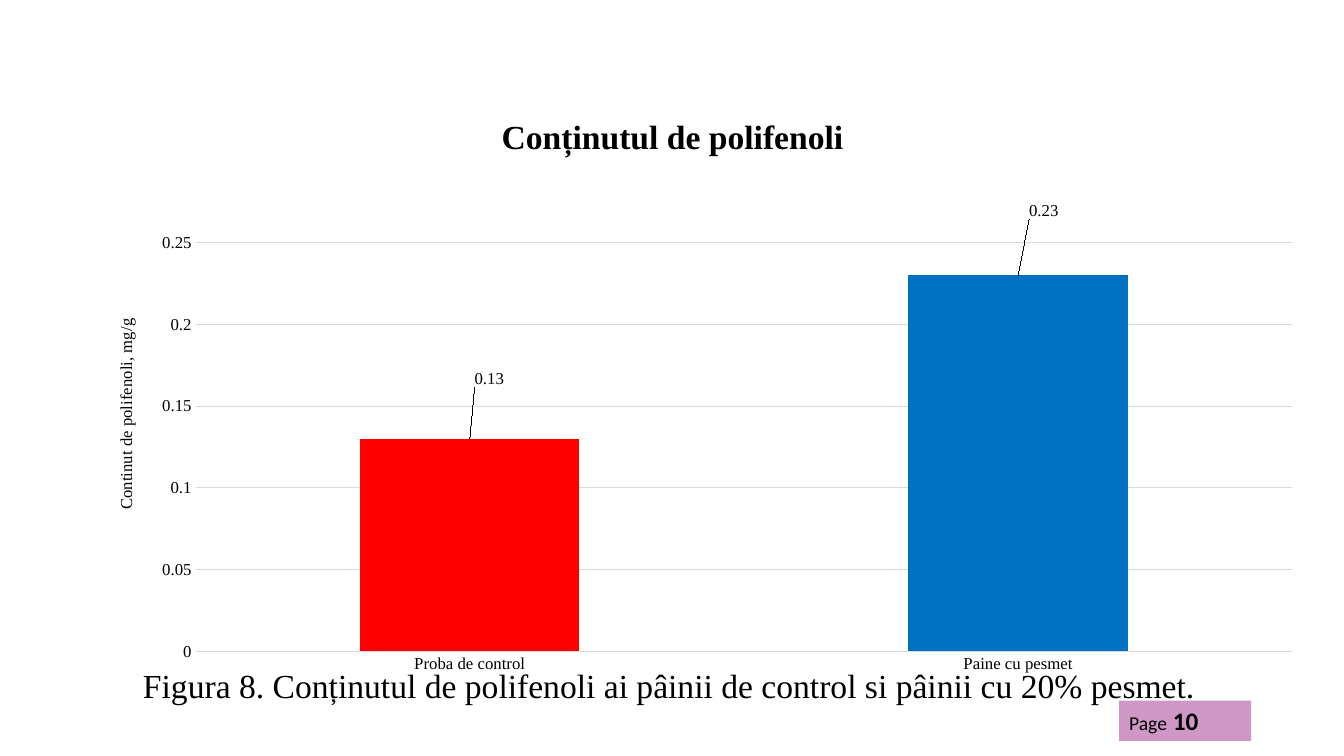
from lxml import etree
from pptx import Presentation
from pptx.chart.data import CategoryChartData
from pptx.dml.color import RGBColor
from pptx.enum.chart import XL_CHART_TYPE, XL_LABEL_POSITION, XL_TICK_MARK
from pptx.enum.shapes import MSO_SHAPE
from pptx.enum.text import MSO_ANCHOR, PP_ALIGN
from pptx.oxml.ns import qn
from pptx.util import Inches, Pt

COLUMNS = XL_CHART_TYPE.COLUMN_CLUSTERED
OUTSIDE = XL_LABEL_POSITION.OUTSIDE_END
NO_TICK = XL_TICK_MARK.NONE
RECTANGLE = MSO_SHAPE.RECTANGLE
MIDDLE = MSO_ANCHOR.MIDDLE
CENTER, LEFT = PP_ALIGN.CENTER, PP_ALIGN.LEFT
SERIF = "Times New Roman"


def style_font(font, size, color="000000", name=SERIF, bold=False):
    font.size = Pt(size)
    font.name = name
    font.bold = bold
    font.color.rgb = RGBColor.from_string(color)


def set_layout(parent, index, **values):
    """Place a chart part by fractions of the chart's size."""
    for old in parent.findall(qn("c:layout")):
        parent.remove(old)
    layout = etree.Element(qn("c:layout"))
    manual = etree.SubElement(layout, qn("c:manualLayout"))
    for tag, value in values.items():
        etree.SubElement(manual, qn(f"c:{tag}")).set("val", str(value))
    parent.insert(index, layout)


deck = Presentation()
deck.slide_width = Inches(13.33)
deck.slide_height = Inches(7.5)
page = deck.slides.add_slide(deck.slide_layouts[6])

# Title
title_box = page.shapes.add_textbox(Inches(0.92), Inches(0.91), Inches(11.5), Inches(0.94))
title_box.text_frame.word_wrap = True
title_box.text_frame.vertical_anchor = MIDDLE
para = title_box.text_frame.paragraphs[0]
para.text = "Conținutul de polifenoli"
para.alignment = CENTER
para.line_spacing = 0.9
style_font(para.font, 24, bold=True)

# Page number
page_tag = page.shapes.add_shape(RECTANGLE, Inches(11.1), Inches(6.95), Inches(1.31), Inches(0.4))
page_tag.shadow.inherit = False
page_tag.line.fill.background()
page_tag.fill.solid()
page_tag.fill.fore_color.rgb = RGBColor.from_string("9F318D")
tag_color = page_tag.fill._xPr.find(f".//{qn('a:srgbClr')}")
etree.SubElement(tag_color, qn("a:alpha")).set("val", "50000")
page_tag.text_frame.vertical_anchor = MIDDLE
para = page_tag.text_frame.paragraphs[0]
para.alignment = LEFT
for text, size, bold in (("Page", 14, False), (" 10", 18, True)):
    span = para.add_run()
    span.text = text
    style_font(span.font, size, name="Calibri", bold=bold)

# Polyphenol chart
data = CategoryChartData()
data.categories = ["Proba de control", "Paine cu pesmet"]
data.add_series("Series 1", (0.13, 0.23))
chart = page.shapes.add_chart(
    COLUMNS, Inches(0.92), Inches(2), Inches(12.14), Inches(4.76), data).chart
style_font(chart.font, 10, name="Calibri")
chart.has_title = False
chart.has_legend = False
set_layout(chart._chartSpace.chart.plotArea, 0, layoutTarget="inner", xMode="edge",
           yMode="edge", x=0.084, y=0.077, w=0.896, h=0.86)

# Axes
for axis in (chart.category_axis, chart.value_axis):
    axis.major_tick_mark = NO_TICK
    axis.minor_tick_mark = NO_TICK
    axis.format.line.fill.background()
    style_font(axis.tick_labels.font, 12)
value_axis = chart.value_axis
value_axis.minimum_scale = 0
value_axis.maximum_scale = 0.25
value_axis.major_unit = 0.05
grid_line = value_axis.major_gridlines.format.line
grid_line.color.rgb = RGBColor.from_string("D9D9D9")
grid_line.width = Pt(0.75)
para = value_axis.axis_title.text_frame.paragraphs[0]
para.text = "Continut de polifenoli, mg/g"
style_font(para.font, 12)
set_layout(value_axis.axis_title._element, 1, xMode="edge", yMode="edge", x=0.016, y=0.234)

# Columns and their raised labels
plot = chart.plots[0]
plot.gap_width = 150
plot.vary_by_categories = False
series = plot.series[0]
series.format.fill.solid()
series.format.fill.fore_color.rgb = RGBColor.from_string("4472C4")
series.data_labels.show_value = True
style_font(series.data_labels.font, 12)
columns = (("FF0000", 0.016, -0.1), ("0070C0", 0.021, -0.11))
for index, (color, shift_x, shift_y) in enumerate(columns):
    point = series.points[index]
    point.format.fill.solid()
    point.format.fill.fore_color.rgb = RGBColor.from_string(color)
    style_font(point.data_label.font, 12)
    point.data_label.position = OUTSIDE
    label = series.data_labels._element.findall(qn("c:dLbl"))[index]
    set_layout(label, 1, x=shift_x, y=shift_y)

# Caption
caption_box = page.shapes.add_textbox(Inches(1.32), Inches(6.55), Inches(10.7), Inches(0.5))
caption_box.text_frame.word_wrap = True
para = caption_box.text_frame.paragraphs[0]
para.text = "Figura 8. Conținutul de polifenoli ai pâinii de control si pâinii cu 20% pesmet."
style_font(para.font, 24)

deck.save("out.pptx")
